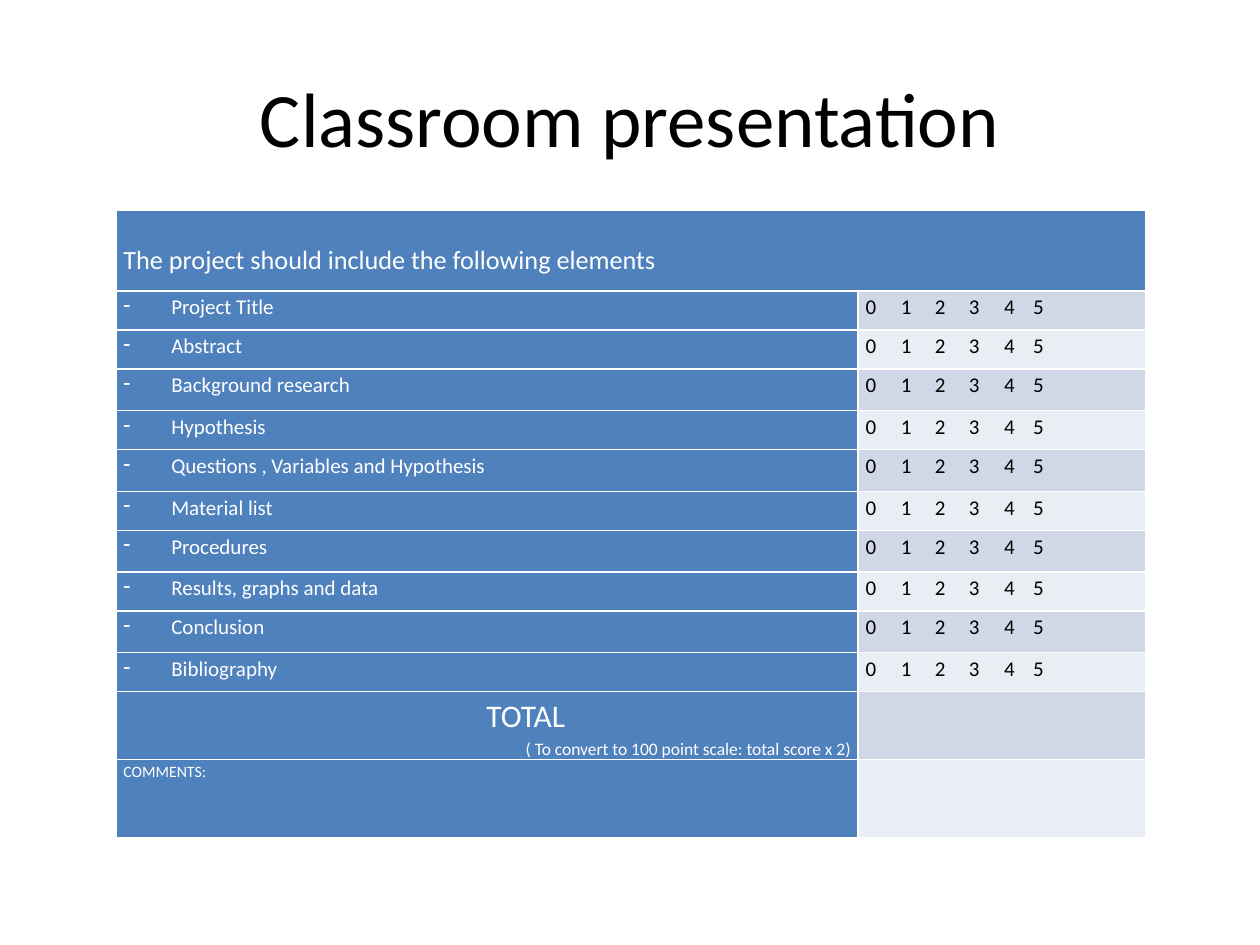
from pptx import Presentation
from pptx.dml.color import RGBColor
from pptx.enum.text import MSO_ANCHOR, PP_ALIGN as Align
from pptx.oxml.ns import qn
from pptx.util import Inches, Pt
from lxml.etree import SubElement, Element

WHITE, BLACK, BLUE = "FFFFFF", "000000", "4F81BD"
BANDS = ["D0D8E8", "E9EDF4"]
ELEMENTS = ["Project Title", "Abstract", "Background research", "Hypothesis",
            "Questions , Variables and Hypothesis", "Material list", "Procedures",
            "Results, graphs and data", "Conclusion", "Bibliography"]
SCORES = "\t".join("012345")
SCORE_STOPS = [0.28, 0.55, 0.82, 1.1, 1.33]


def color(value):
    return RGBColor.from_string(value)


def format_paragraph(paragraph, size, font_color, align=Align.LEFT, spacing=1.15):
    paragraph.alignment = align
    paragraph.line_spacing = spacing
    for run in paragraph.runs:
        run.font.name = "Calibri"
        run.font.size = Pt(size)
        run.font.color.rgb = color(font_color)
    return paragraph._p.get_or_add_pPr()


presentation = Presentation()
presentation.slide_width, presentation.slide_height = Inches(10), Inches(7.5)
slide = presentation.slides.add_slide(presentation.slide_layouts[6])

# Title
title = slide.shapes.add_textbox(Inches(0.5), Inches(0.3), Inches(9), Inches(1.25))
title.text_frame.word_wrap = True
title.text_frame.vertical_anchor = MSO_ANCHOR.MIDDLE
title.text_frame.text = "Classroom presentation"
format_paragraph(title.text_frame.paragraphs[0], 44, BLACK, Align.CENTER, 1.0)

# Table grid
heights = [0.64, 0.31] + [0.31, 0.33] * 4 + [0.31, 0.54, 0.62]
table = slide.shapes.add_table(len(heights), 2, Inches(0.92), Inches(1.67),
                               Inches(8.17), Inches(sum(heights))).table
for column, width in zip(table.columns, [5.89, 2.28]):
    column.width = Inches(width)
for row, height in zip(table.rows, heights):
    row.height = Inches(height)

# Cell fills, margins and white borders
for row_index, row in enumerate(table.rows):
    for column_index, cell in enumerate(row.cells):
        cell.margin_left = cell.margin_right = Inches(0.06)
        cell.margin_top = cell.margin_bottom = 0
        is_blue = column_index == 0 or row_index == 0
        cell.fill.solid()
        cell.fill.fore_color.rgb = color(BLUE if is_blue else BANDS[(row_index - 1) % 2])
        properties = cell._tc.get_or_add_tcPr()
        for position, side in enumerate(["a:lnL", "a:lnR", "a:lnT", "a:lnB"]):
            border = Element(qn(side), w=str(Pt(1)))
            SubElement(SubElement(border, qn("a:solidFill")), qn("a:srgbClr"), val=WHITE)
            properties.insert(position, border)

# Header row
header = table.cell(0, 0)
header.merge(table.cell(0, 1))
header.margin_top = Inches(0.23)
header.text_frame.text = "The project should include the following elements"
format_paragraph(header.text_frame.paragraphs[0], 15, WHITE)

# Element rows with their scores
for row_index, element in enumerate(ELEMENTS, start=1):
    label, score = table.cell(row_index, 0), table.cell(row_index, 1)
    label.text_frame.text = element
    label_format = format_paragraph(label.text_frame.paragraphs[0], 12, WHITE)
    label_format.set("marL", str(Inches(0.38)))
    label_format.set("indent", str(Inches(-0.38)))
    SubElement(label_format, qn("a:buChar"), char="-")

    score.text_frame.text = SCORES
    score_format = format_paragraph(score.text_frame.paragraphs[0], 12, BLACK)
    tab_list = SubElement(score_format, qn("a:tabLst"))
    for stop in SCORE_STOPS:
        SubElement(tab_list, qn("a:tab"), pos=str(Inches(stop)), algn="l")

# Total row
total = table.cell(11, 0).text_frame
total.text = "TOTAL\n( To convert to 100 point scale: total score x 2)"
total_format = format_paragraph(total.paragraphs[0], 18, WHITE)
total_format.set("marL", str(Inches(2.88)))
format_paragraph(total.paragraphs[1], 10, WHITE, Align.RIGHT)

# Comments row
comments = table.cell(12, 0).text_frame
comments.text = "COMMENTS:"
format_paragraph(comments.paragraphs[0], 9, WHITE)

presentation.save("out.pptx")
